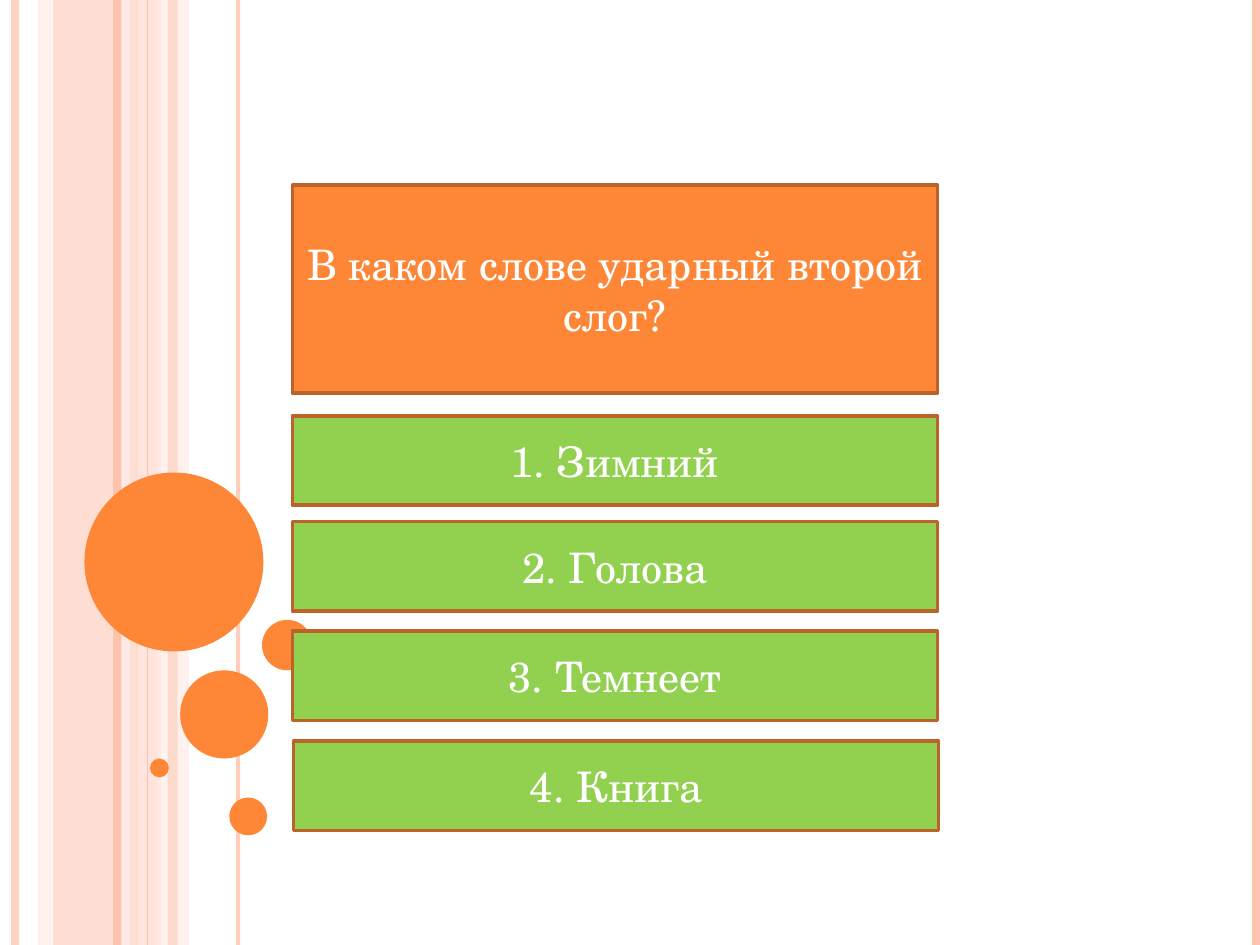
from lxml import etree
from pptx import Presentation
from pptx.dml.color import RGBColor
from pptx.enum.shapes import MSO_CONNECTOR, MSO_SHAPE
from pptx.enum.text import MSO_ANCHOR, PP_ALIGN
from pptx.oxml.ns import qn
from pptx.util import Inches, Pt

RECTANGLE, OVAL = MSO_SHAPE.RECTANGLE, MSO_SHAPE.OVAL
STRAIGHT = MSO_CONNECTOR.STRAIGHT
CENTER, MIDDLE = PP_ALIGN.CENTER, MSO_ANCHOR.MIDDLE

ORANGE = RGBColor(0xFE, 0x86, 0x37)
BROWN = RGBColor(0xBC, 0x63, 0x29)
GREEN = RGBColor(0x92, 0xD0, 0x50)
WHITE = RGBColor(0xFF, 0xFF, 0xFF)
PEACH = RGBColor(0xFE, 0xC3, 0xAE)
PALE_PEACH = RGBColor(0xFF, 0xD9, 0xCE)
FAINT_PEACH = RGBColor(0xFF, 0xED, 0xE8)

FONT = "TeX Gyre Schola"
SLIDE_WIDTH, SLIDE_HEIGHT = 10, 7.5
BOX_LEFT, BOX_WIDTH, ANSWER_HEIGHT = 2.32, 5.12, 0.71

QUESTION = "В каком слове ударный второй слог?"
QUESTION_TOP, QUESTION_HEIGHT = 1.47, 1.65
# text, left, top
ANSWERS = [
    ("1. Зимний", BOX_LEFT, 3.3),
    ("2. Голова", BOX_LEFT, 4.14),
    ("3. Темнеет", BOX_LEFT, 5.01),
    ("4. Книга", BOX_LEFT + 0.01, 5.88),
]
# left, width, colour, opacity in percent
BANDS = [
    (0.42, 0.67, PEACH, 54),
    (0.3, 0.11, PALE_PEACH, 36),
    (1.08, 0.2, PALE_PEACH, 70),
    (1.25, 0.25, FAINT_PEACH, 71),
    (1.33, 0.08, PEACH, 51),
]
# x, line width in points, colour, opacity in percent
STRIPES = [
    (0.12, 4.5, PEACH, 73),
    (1, 4.5, FAINT_PEACH, 83),
    (0.93, 4.5, PEACH, 100),
    (1.89, 2.25, PEACH, 82),
    (1.17, 0.75, PEACH, 100),
    (9.97, 4.5, PEACH, 100),
]
# left, top, diameter
CIRCLES = [
    (0.67, 3.75, 1.42),
    (1.43, 5.32, 0.7),
    (1.19, 6.02, 0.15),
    (1.82, 6.33, 0.3),
    (2.08, 4.92, 0.4),
]


def set_opacity(shape, percent):
    """Make the shape's only colour, in its fill or its line, see-through."""
    if percent < 100:
        color = next(shape._element.spPr.iter(qn("a:srgbClr")))
        etree.SubElement(color, qn("a:alpha")).set("val", str(percent * 1000))


def add_filled(slide, preset, left, top, width, height, color):
    shape = slide.shapes.add_shape(
        preset, Inches(left), Inches(top), Inches(width), Inches(height))
    shape.shadow.inherit = False
    shape.fill.solid()
    shape.fill.fore_color.rgb = color
    shape.line.fill.background()
    return shape


def add_stripe(slide, x, width, color, opacity):
    stripe = slide.shapes.add_connector(
        STRAIGHT, Inches(x), 0, Inches(x), Inches(SLIDE_HEIGHT))
    stripe.line.color.rgb = color
    stripe.line.width = Pt(width)
    set_opacity(stripe, opacity)
    etree.SubElement(stripe._element.spPr, qn("a:effectLst"))


def add_text_box(slide, text, left, top, height, color):
    box = add_filled(slide, RECTANGLE, left, top, BOX_WIDTH, height, color)
    box.line.color.rgb = BROWN
    box.line.width = Pt(2)
    frame = box.text_frame
    frame.text = text
    frame.word_wrap = True
    frame.vertical_anchor = MIDDLE
    paragraph = frame.paragraphs[0]
    paragraph.alignment = CENTER
    font = paragraph.runs[0].font
    font.name, font.size = FONT, Pt(24)
    font.color.rgb = WHITE


def main():
    prs = Presentation()
    prs.slide_width, prs.slide_height = Inches(SLIDE_WIDTH), Inches(SLIDE_HEIGHT)
    slide = prs.slides.add_slide(prs.slide_layouts[6])

    for left, width, color, opacity in BANDS:
        band = add_filled(slide, RECTANGLE, left, 0, width, SLIDE_HEIGHT, color)
        set_opacity(band, opacity)
    for stripe in STRIPES:
        add_stripe(slide, *stripe)
    for left, top, diameter in CIRCLES:
        add_filled(slide, OVAL, left, top, diameter, diameter, ORANGE)

    add_text_box(slide, QUESTION, BOX_LEFT, QUESTION_TOP, QUESTION_HEIGHT, ORANGE)
    for answer, left, top in ANSWERS:
        add_text_box(slide, answer, left, top, ANSWER_HEIGHT, GREEN)

    prs.save("out.pptx")


if __name__ == "__main__":
    main()
